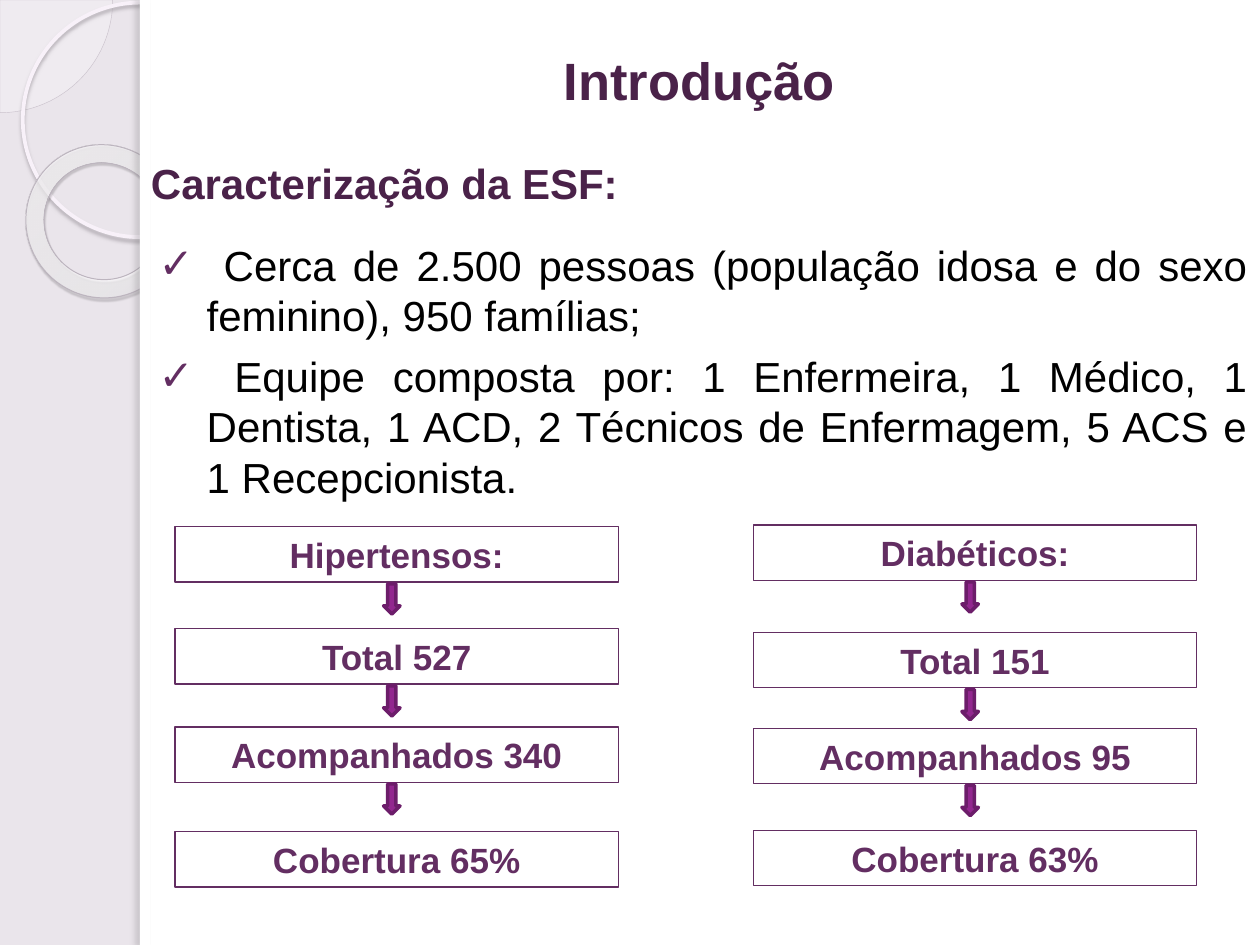
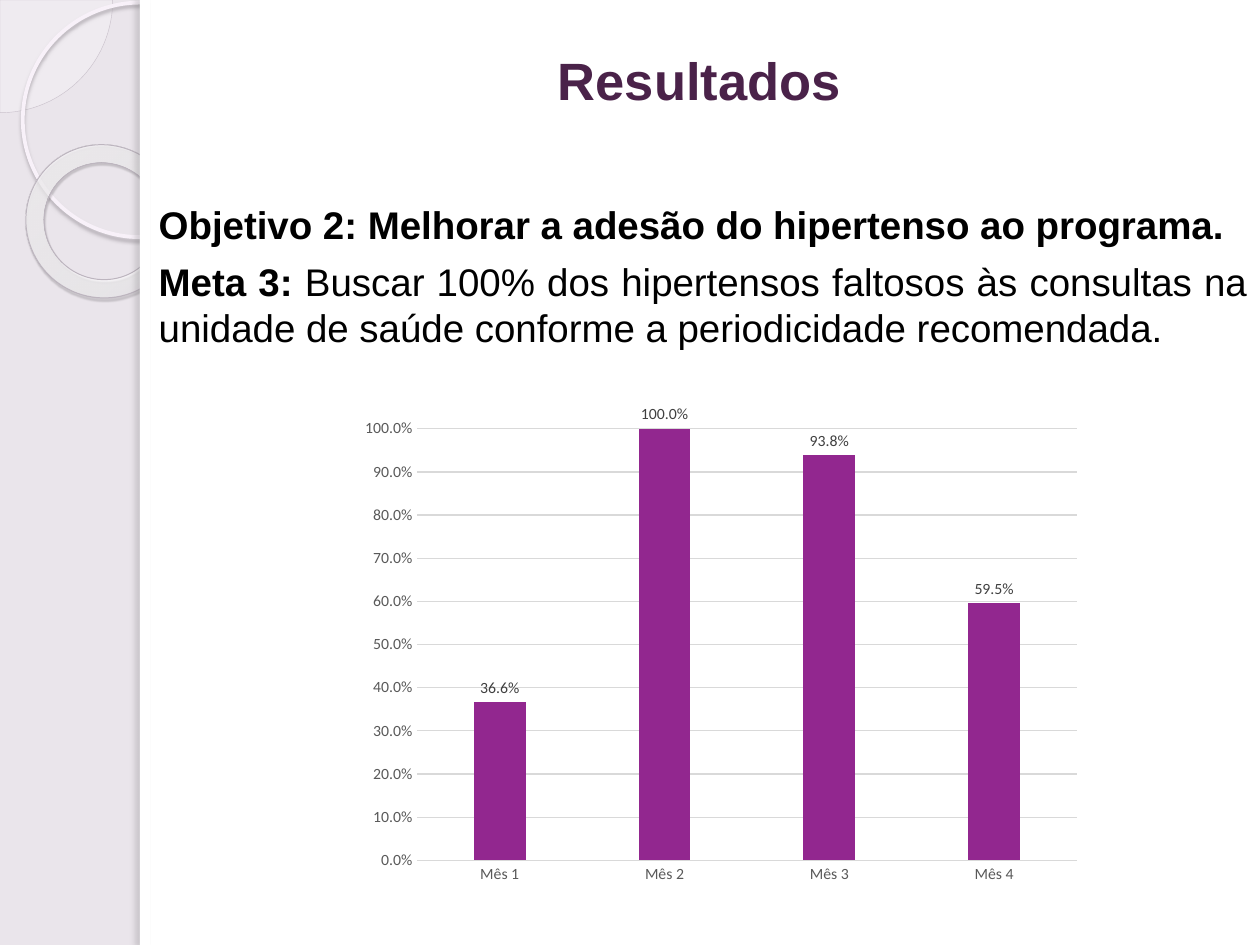
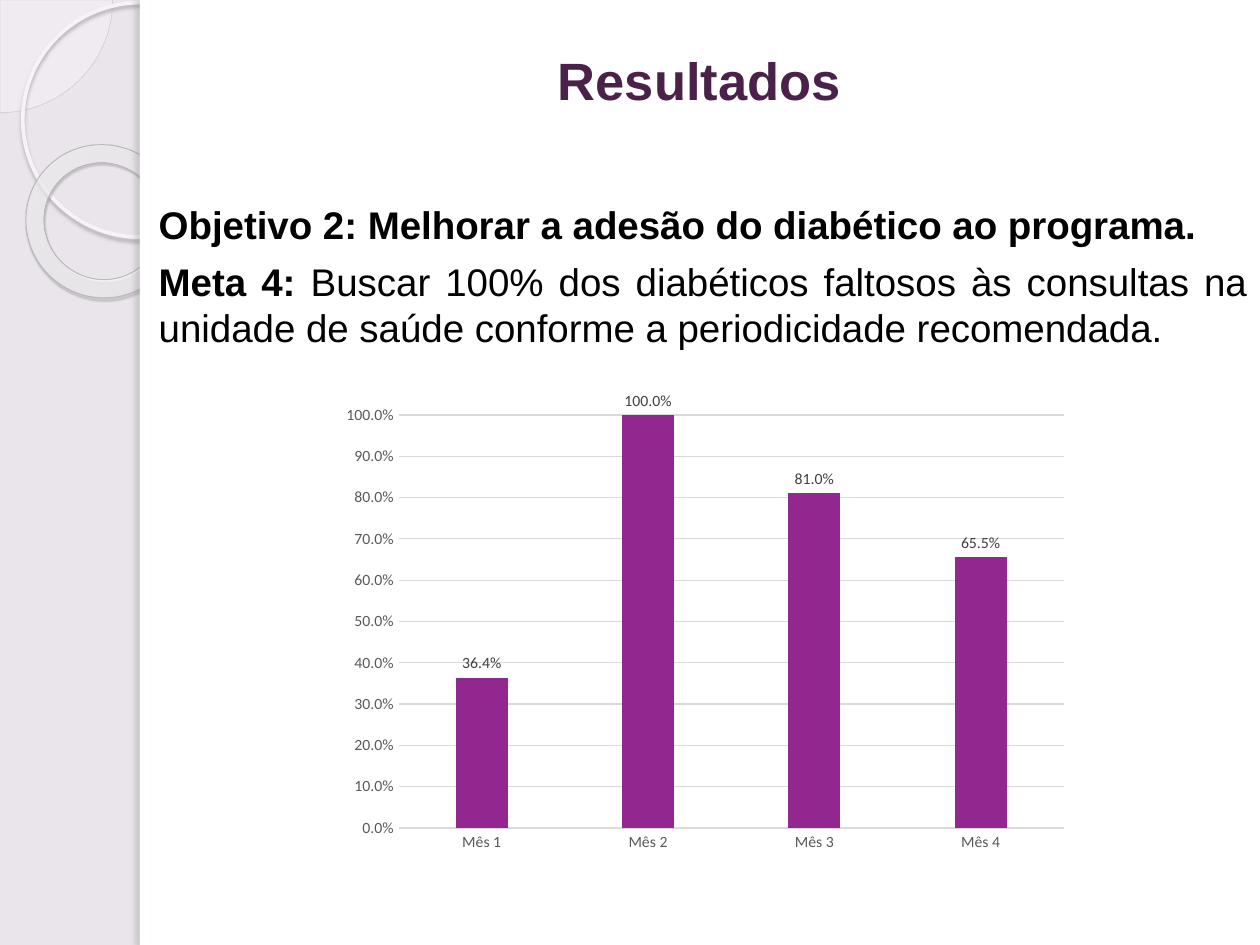
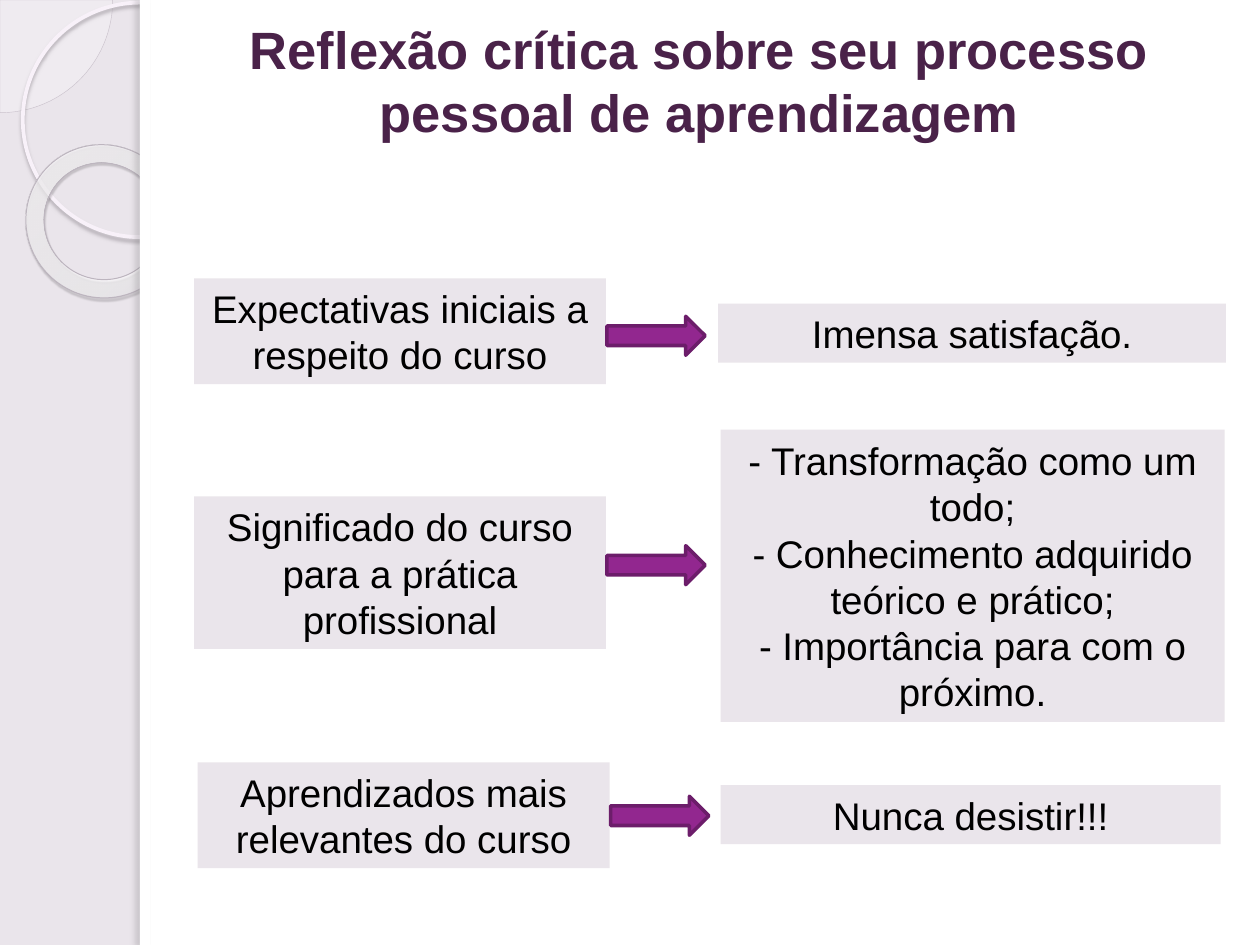
from pptx import Presentation
from pptx.chart.data import CategoryChartData as ChartData
from pptx.dml.color import RGBColor as RGB
from pptx.enum.chart import XL_CHART_TYPE as KIND, XL_LABEL_POSITION as SPOT
from pptx.enum.chart import XL_TICK_MARK as TICK
from pptx.enum.shapes import MSO_SHAPE as SHAPE
from pptx.enum.text import MSO_ANCHOR as ANCHOR, MSO_AUTO_SIZE as AUTO
from pptx.enum.text import PP_ALIGN as ALIGN
from pptx.oxml import parse_xml
from pptx.util import Pt

NS = 'xmlns:a="http://schemas.openxmlformats.org/drawingml/2006/main"'
FONT = "Arial"
INK = {
    "band": "EAE5EB", "page": "FFFFFF", "text": "000000",
    "title": "4A2249", "plum": "632E62", "fill": "92278F", "edge": "6C1D6A",
    "pie": "FCFAFC", "rim": "CAC2CC", "ring": "F8F1F9", "donut": "BDB5BF",
    "glow": "AEA8AF", "dark": "575357", "side": "747275",
    "grid": "D9D9D9", "axis": "595959", "label": "404040",
}


def color(name):
    return RGB.from_string(INK[name])


# Shared helpers
def draw(slide, kind, box, fill=None, line=None, width=0.75):
    shape = slide.shapes.add_shape(kind, *map(Pt, box))
    shape.shadow.inherit = False
    if fill:
        shape.fill.solid()
        shape.fill.fore_color.rgb = color(fill)
    else:
        shape.fill.background()
    if line:
        shape.line.color.rgb = color(line)
        shape.line.width = Pt(width)
    else:
        shape.line.fill.background()
    return shape


def shade(shape, name, alpha, blur, dist, angle):
    """Give the shape an outer shadow."""
    effects = shape.element.spPr.find("{*}effectLst")
    effects.append(parse_xml(
        f'<a:outerShdw {NS} blurRad="{Pt(blur)}" dist="{Pt(dist)}" '
        f'dir="{angle * 60000}" algn="ctr" rotWithShape="0">'
        f'<a:srgbClr val="{INK[name]}"><a:alpha val="{alpha * 1000}"/>'
        '</a:srgbClr></a:outerShdw>'))


def style(font, size, name, bold=False, face=FONT):
    font.name, font.size, font.bold = face, Pt(size), bold
    font.color.rgb = color(name)


def write(shape, lines, size, name, bold=False, align=ALIGN.CENTER):
    frame = shape.text_frame
    frame.text = "\n".join(lines)
    frame.word_wrap = True
    frame.auto_size = AUTO.NONE
    frame.vertical_anchor = ANCHOR.MIDDLE
    for par in frame.paragraphs:
        par.alignment = align
        for run in par.runs:
            style(run.font, size, name, bold)
    return frame


def place(shape, box):
    shape.left, shape.top, shape.width, shape.height = map(Pt, box)


def indent(par, left, mark):
    """Set the hanging indent and the bullet, or none."""
    par.space_before, par.space_after = Pt(0), Pt(6)
    props = par._p.get_or_add_pPr()
    props.set("marL", str(Pt(left)))
    props.set("indent", str(-Pt(left)))
    if mark:
        props.append(parse_xml(
            f'<a:buClr {NS}><a:srgbClr val="{INK["plum"]}"/></a:buClr>'))
        props.append(parse_xml(f'<a:buChar {NS} char="{mark}"/>'))
    else:
        props.append(parse_xml(f'<a:buNone {NS}/>'))


# Side band with rings, kept on the master
def dress(master, slide):
    master.background.fill.solid()
    master.background.fill.fore_color.rgb = color("band")

    pie = draw(slide, SHAPE.PIE, (-64.4, -64.4, 128.8, 128.8), "pie", "rim", 0.25)
    pie.adjustments[0], pie.adjustments[1] = 0, 54.02
    pie.element.spPr.find("{*}solidFill")[0].append(
        parse_xml(f'<a:alpha {NS} val="33000"/>'))

    ring = draw(slide, SHAPE.OVAL, (13, 1.5, 134, 134), None, "ring", 2.15)
    shade(ring, "glow", 85, 2, 2, 90)

    donut = draw(slide, SHAPE.DONUT, (14.5, 83, 88.5, 87), None, "donut", 0.58)
    donut.rotation = 38.6
    donut.adjustments[0] = 0.12
    stops = "".join(
        f'<a:gs pos="{pos}000"><a:srgbClr val="{tone}">'
        f'<a:alpha val="{alpha}000"/></a:srgbClr></a:gs>'
        for pos, tone, alpha in ((0, "FCFBFD", 70), (70, "FEFDFE", 55),
                                 (100, "D3C3D7", 60)))
    blank = donut.element.spPr.find("{*}noFill")
    blank.getparent().replace(blank, parse_xml(
        f'<a:gradFill {NS} rotWithShape="1"><a:gsLst>{stops}</a:gsLst>'
        '<a:path path="circle"><a:fillToRect l="-408000" t="-50000" '
        'r="508000" b="150000"/></a:path></a:gradFill>'))
    shade(donut, "dark", 35, 1, 1.2, 75)

    page = draw(slide, SHAPE.RECTANGLE, (80, 0, 640, 540), "page")
    edge = draw(slide, SHAPE.RECTANGLE, (80, 0, 5.8, 540), "page")
    shade(edge, "side", 25, 3, 3, 180)

    for spot, part in enumerate((pie, ring, donut, page, edge)):
        part.element.nvSpPr.cNvPr.set("id", str(100 + spot))
        master.shapes.element.insert(2 + spot, part.element)


# Title across the page
def head(slide, text):
    place(slide.shapes.title, (79.2, 0, 640.8, 91.4))
    write(slide.shapes.title, [text], 30, "title", True)


# Column of boxes joined by block arrows
def chain(slide, left, wide, tops, lines):
    high = 31.7
    for top, text in zip(tops, lines):
        box = draw(slide, SHAPE.RECTANGLE, (left, top, wide, high), None, "plum")
        write(box, [text], 20, "plum", True)
    for top in tops[:-1]:
        spot = (left + wide / 2 - 7.5, top + high + 0.9, 9.4, 17.3)
        draw(slide, SHAPE.DOWN_ARROW, spot, "fill", "edge", 2)


def intro(slide):
    head(slide, "Introdução")
    sub = slide.shapes.add_textbox(*map(Pt, (79.2, 69.1, 640.8, 70.6)))
    write(sub, ["Caracterização da ESF:"], 24, "title", True, ALIGN.LEFT)

    body = slide.placeholders[1]
    place(body, (83.5, 122.4, 636.5, 178.6))
    frame = write(body, [
        " Cerca de 2.500 pessoas (população idosa e do sexo feminino), "
        "950 famílias;",
        " Equipe composta por: 1 Enfermeira, 1 Médico, 1 Dentista, 1 ACD, "
        "2 Técnicos de Enfermagem, 5 ACS e 1 Recepcionista.",
    ], 24, "text", align=ALIGN.JUSTIFY)
    for par in frame.paragraphs:
        indent(par, 27.4, "✓")

    chain(slide, 100, 253.4, (301, 359.3, 415.4, 475.2),
          ("Hipertensos:", "Total 527", "Acompanhados 340", "Cobertura 65%"))
    chain(slide, 430.5, 253.4, (300, 361.4, 416.2, 474.5),
          ("Diabéticos:", "Total 151", "Acompanhados 95", "Cobertura 63%"))


# Column chart of monthly shares
def bars(slide, box, values):
    data = ChartData(number_format="0.0%")
    data.categories = [f"Mês {month}" for month in range(1, 5)]
    data.add_series("Series 1", values)
    chart = slide.shapes.add_chart(
        KIND.COLUMN_CLUSTERED, *map(Pt, box), data).chart
    chart.has_legend = chart.has_title = False
    style(chart.font, 10, "text", face="Calibri")

    plot = chart.plots[0]
    plot.gap_width, plot.overlap, plot.vary_by_categories = 219, -27, False
    fill = plot.series[0].format.fill
    fill.solid()
    fill.fore_color.rgb = color("fill")
    plot.has_data_labels = True
    labels = plot.data_labels
    labels.show_value, labels.position = True, SPOT.OUTSIDE_END
    labels.number_format, labels.number_format_is_linked = "0.0%", False
    style(labels.font, 9, "label", face="Calibri")

    cat, val = chart.category_axis, chart.value_axis
    for axis in (cat, val):
        axis.major_tick_mark = axis.minor_tick_mark = TICK.NONE
        style(axis.tick_labels.font, 9, "axis", face="Calibri")
    val.minimum_scale, val.maximum_scale, val.major_unit = 0, 1, 0.1
    val.tick_labels.number_format = "0.0%"
    val.tick_labels.number_format_is_linked = False
    val.format.line.fill.background()
    for line in (cat.format.line, val.major_gridlines.format.line):
        line.color.rgb = color("grid")
        line.width = Pt(0.75)


def result(slide, group, goal, box, values):
    head(slide, "Resultados")
    body = slide.placeholders[1]
    place(body, (83.5, 96.5, 636.5, 215.3))
    frame = write(body, [
        f"Objetivo 2: Melhorar a adesão do {group} ao programa.",
        f"Meta {goal}: ",
    ], 22, "text", True, ALIGN.JUSTIFY)
    frame.vertical_anchor = ANCHOR.TOP
    frame.margin_top = Pt(18.5)
    run = frame.paragraphs[1].add_run()
    run.text = (f"Buscar 100% dos {group}s faltosos às consultas na unidade "
                "de saúde conforme a periodicidade recomendada.")
    style(run.font, 22, "text")
    for par in frame.paragraphs:
        indent(par, 0, None)
    bars(slide, box, values)


# Topic, arrow and answer in one row
def pair(slide, left, right, arrow, topic, answer):
    for box, lines in ((left, [topic]), (right, answer)):
        write(draw(slide, SHAPE.RECTANGLE, box, "band"), lines, 22, "text")
    spot = (left[0] + left[2] + 0.5, arrow, 56.2, 22.3)
    draw(slide, SHAPE.RIGHT_ARROW, spot, "fill", "edge", 2)


def review(slide):
    head(slide, "Reflexão crítica sobre seu processo pessoal de aprendizagem")
    pair(slide, (110.9, 159.1, 235.4, 60.5), (410.4, 173.5, 290.2, 33.8), 180.7,
         "Expectativas iniciais a respeito do curso", ["Imensa satisfação."])
    pair(slide, (110.9, 283.7, 235.4, 87.1), (411.8, 245.5, 288, 167), 311.8,
         "Significado do curso para a prática profissional",
         ["- Transformação como um todo;",
          "- Conhecimento adquirido teórico e prático;",
          "- Importância para com o próximo."])
    pair(slide, (113, 435.6, 235.4, 60.5), (411.8, 448.6, 285.8, 33.8), 455,
         "Aprendizados mais relevantes do curso", ["Nunca desistir!!!"])


def main():
    deck = Presentation()
    deck.slide_width, deck.slide_height = Pt(720), Pt(540)
    both, only = deck.slide_layouts[1], deck.slide_layouts[5]
    first, second, third, last = (
        deck.slides.add_slide(kind) for kind in (both, both, both, only))
    dress(deck.slide_master, first)
    intro(first)
    result(second, "hipertenso", 3, (200.2, 231.8, 423.4, 278.6),
           (0.366, 1, 0.938, 0.595))
    result(third, "diabético", 4, (189.4, 223.9, 427, 267.8),
           (0.364, 1, 0.81, 0.655))
    review(last)
    deck.save("out.pptx")


if __name__ == "__main__":
    main()
